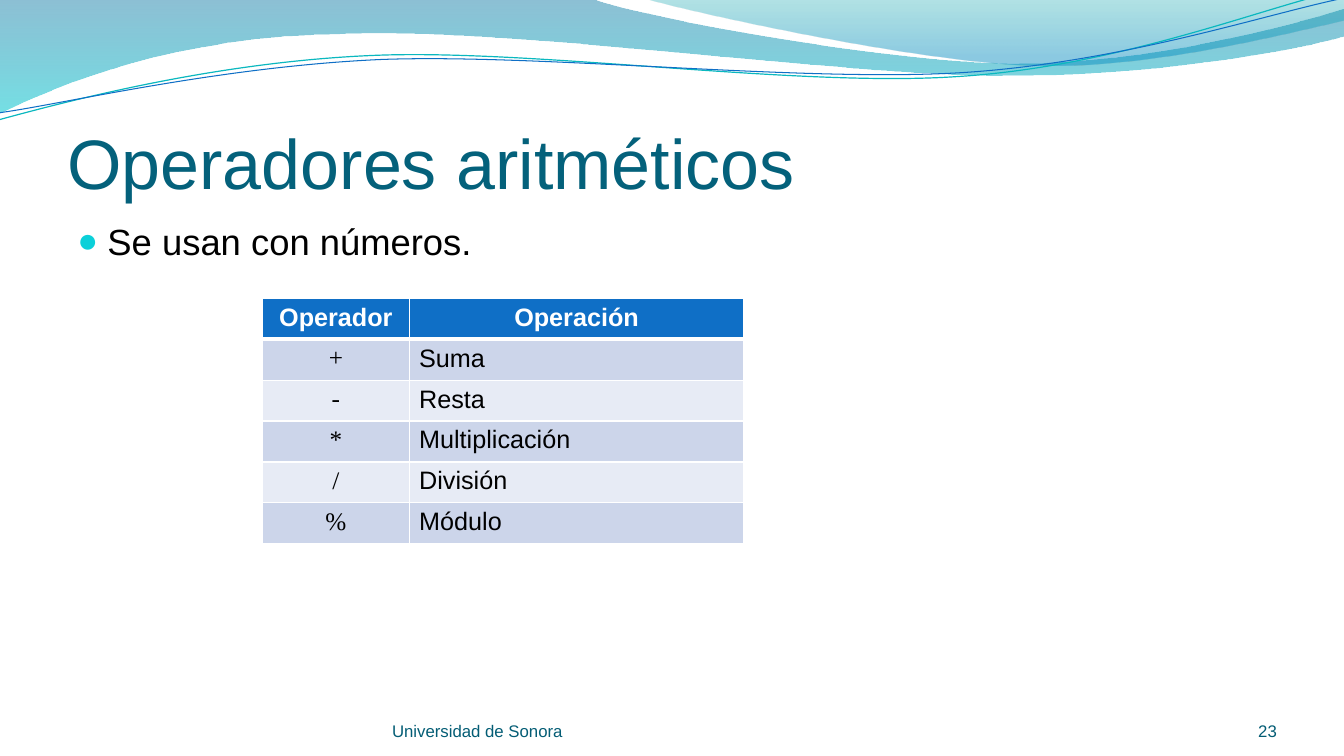
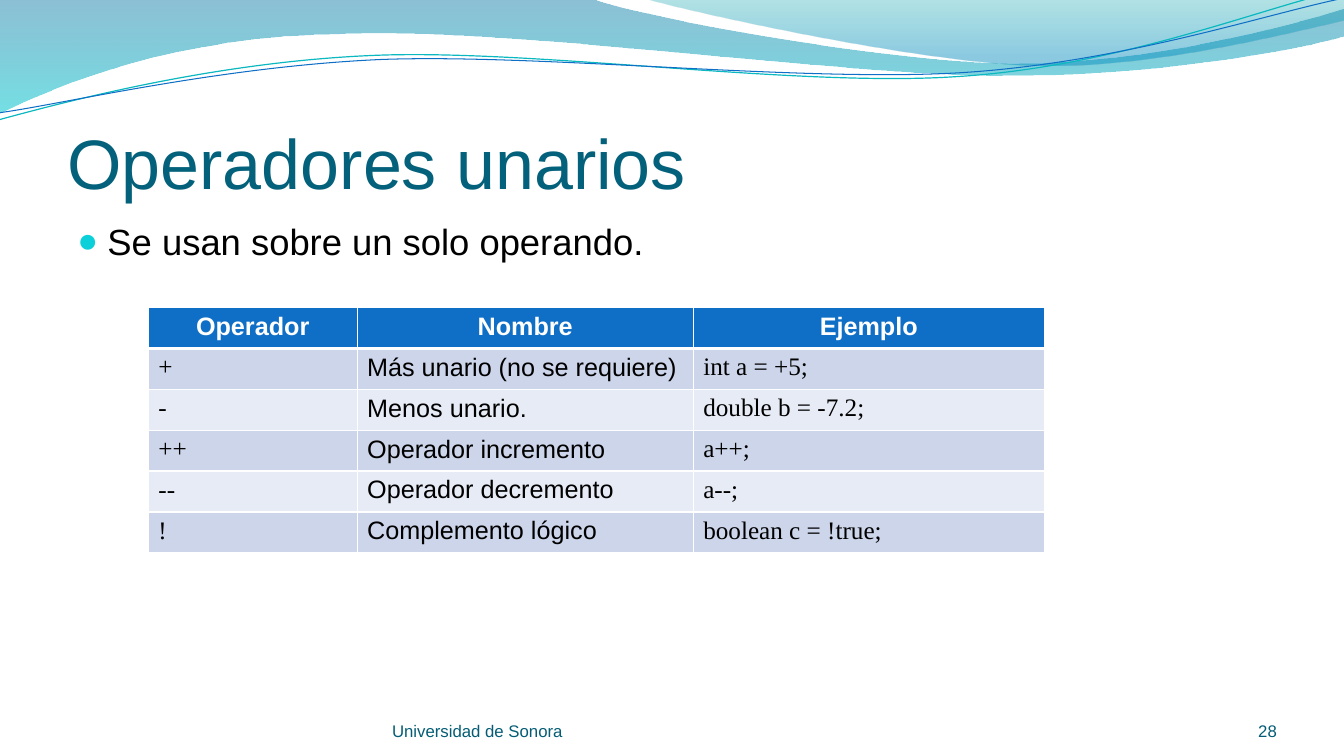
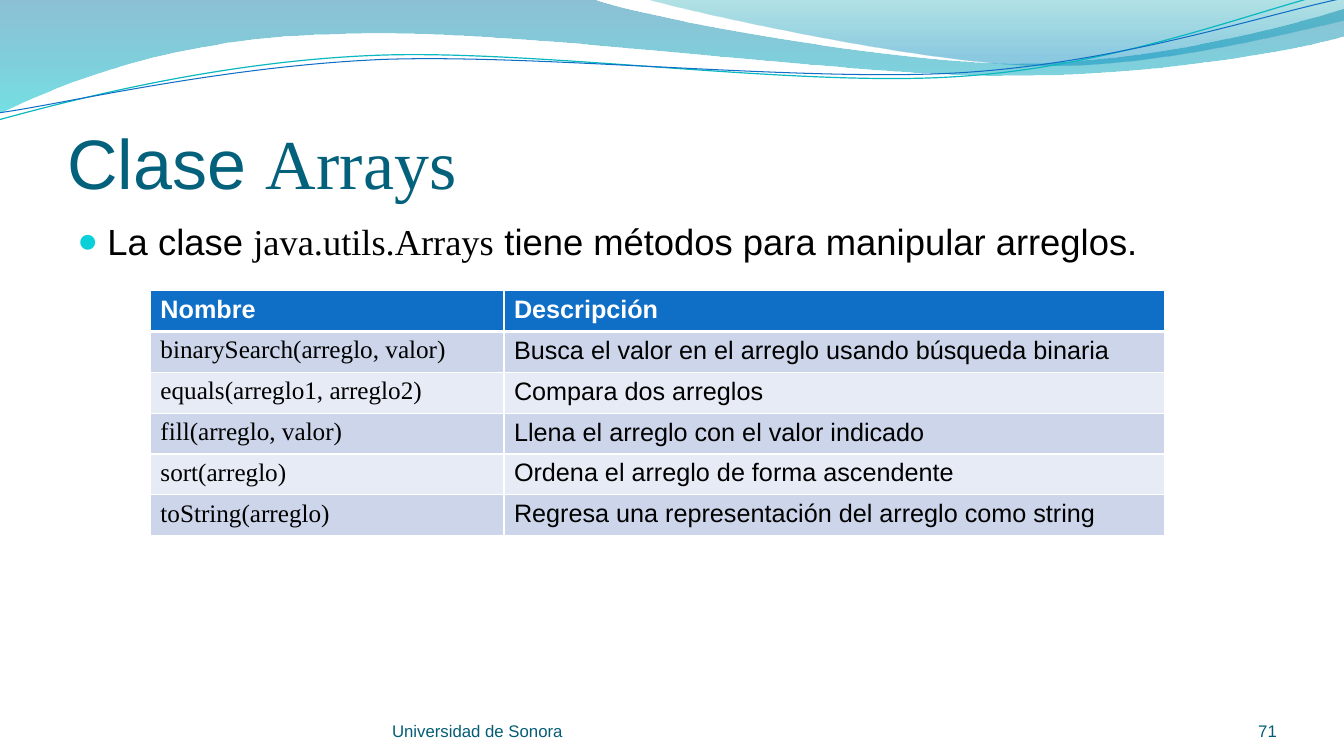
from lxml.etree import SubElement
from pptx import Presentation
from pptx.dml.color import RGBColor
from pptx.enum.text import MSO_ANCHOR, PP_ALIGN
from pptx.oxml.ns import qn
from pptx.util import Cm, Pt

HUES = {
    "title": "04617B", "foot": "045D75", "text": "000000", "white": "FFFFFF",
    "bullet": "0BD0D9", "head": "0F6FC6", "odd": "CCD5EA", "even": "E7EBF5",
    "deep": "0074A1", "aqua": "00C6CF", "sea": "00A1A9", "sky": "008BBF",
    "teal": "0AB8BF", "blue": "0F6FC6",
}
SANS, SERIF = "Arial", "Times New Roman"
LEFT, MID, RIGHT = PP_ALIGN.LEFT, PP_ALIGN.CENTER, PP_ALIGN.RIGHT
FOOT = "Universidad de Sonora"
ROW = 1.03

# Title and lead alternate between the sans and the serif font.
SLIDES = [
    {
        "title": ["Operadores aritméticos"],
        "lead": ["Se usan con números."],
        "page": "23",
        "at": (6.62, 7.52), "cols": (3.69, 8.44),
        "fonts": (SERIF, SANS), "head": MID, "align": (MID, LEFT),
        "rows": [
            ("Operador", "Operación"),
            ("+", "Suma"),
            ("-", "Resta"),
            ("*", "Multiplicación"),
            ("/", "División"),
            ("%", "Módulo"),
        ],
    },
    {
        "title": ["Operadores unarios"],
        "lead": ["Se usan sobre un solo operando."],
        "page": "28",
        "at": (3.74, 7.75), "cols": (5.26, 8.47, 8.85),
        "fonts": (SERIF, SANS, SERIF), "head": MID, "align": (LEFT, LEFT, LEFT),
        "rows": [
            ("Operador", "Nombre", "Ejemplo"),
            ("+", "Más unario (no se requiere)", "int a = +5;"),
            ("-", "Menos unario.", "double b = -7.2;"),
            ("++", "Operador incremento", "a++;"),
            ("--", "Operador decremento", "a--;"),
            ("!", "Complemento lógico", "boolean c = !true;"),
        ],
    },
    {
        "title": ["Clase ", "Arrays"],
        "lead": ["La clase ", "java.utils.Arrays",
                 " tiene métodos para manipular arreglos."],
        "page": "71",
        "at": (3.79, 7.32), "cols": (8.91, 16.65),
        "fonts": (SERIF, SANS), "head": LEFT, "align": (LEFT, LEFT),
        "rows": [
            ("Nombre", "Descripción"),
            ("binarySearch(arreglo, valor)",
             "Busca el valor en el arreglo usando búsqueda binaria"),
            ("equals(arreglo1, arreglo2)", "Compara dos arreglos"),
            ("fill(arreglo, valor)", "Llena el arreglo con el valor indicado"),
            ("sort(arreglo)", "Ordena el arreglo de forma ascendente"),
            ("toString(arreglo)",
             "Regresa una representación del arreglo como string"),
        ],
    },
]

# Each step holds one point (straight) or three points (Bézier curve), in cm.
WAVES = [
    {
        "start": (0, 0),
        "steps": [
            [(14.91, -0.03)],
            [(16.1, 0.43), (22.48, 1.6), (25.68, 1.6)],
            [(28.91, 1.6), (32.46, 0.66), (33.86, 0.23)],
            [(33.91, 0.91)],
            [(33.3, 1.12), (29.46, 1.93), (25.25, 1.91)],
            [(21.06, 1.91), (12.93, 0.71), (8.71, 0.86)],
            [(4.37, 0.91), (1.55, 2.11), (-0.03, 2.87)],
            [(0, 0)],
        ],
        "stops": [(0, "deep", 45), (1, "aqua", 55)],
    },
    {
        "start": (16.23, -0.03),
        "steps": [
            [(17.25, 0.28), (23.09, 1.57), (26.04, 1.65)],
            [(28.98, 1.75), (32.56, 0.81), (33.86, 0.53)],
            [(33.86, 0)],
            [(16.23, -0.03)],
        ],
        "stops": [(0, "sea", 30), (0.8, "sky", 45)],
    },
    {
        "start": (-0.03, 3.02),
        "steps": [
            [(1.63, 2.57), (5.36, 1.57), (9.37, 1.4)],
            [(13.39, 1.22), (20.07, 2.21), (24.13, 1.93)],
            [(28.19, 1.68), (31.8, 0.2), (33.81, -0.25)],
        ],
        "line": ("teal", 0.85),
    },
    {
        "start": (0, 2.84),
        "steps": [
            [(1.6, 2.62), (5.54, 1.68), (9.6, 1.5)],
            [(13.64, 1.35), (20.22, 2.08), (24.26, 1.83)],
            [(28.32, 1.57), (31.88, 0.36), (33.88, -0.05)],
        ],
        "line": ("blue", 0.75),
    },
]


def rgb(name):
    return RGBColor.from_string(HUES[name])


def bend(shape, steps):
    """Join the three lines of each curved step into one Bézier curve."""
    lines = iter(list(shape._element.iter(qn("a:lnTo"))))
    for step in steps:
        parts = [next(lines) for _ in step]
        if len(parts) == 3:
            curve = parts[0].makeelement(qn("a:cubicBezTo"))
            parts[0].addprevious(curve)
            for part in parts:
                curve.append(part[0])
                part.getparent().remove(part)


def add_wave(slide, wave):
    x, y = wave["start"]
    pen = slide.shapes.build_freeform(Cm(x), Cm(y))
    dots = [(Cm(x), Cm(y)) for step in wave["steps"] for x, y in step]
    pen.add_line_segments(dots, close="stops" in wave)
    shape = pen.convert_to_shape()
    bend(shape, wave["steps"])
    shape.shadow.inherit = False
    if "line" in wave:
        hue, width = wave["line"]
        shape.fill.background()
        shape.line.color.rgb = rgb(hue)
        shape.line.width = Pt(width)
        return
    shape.line.fill.background()
    shape.fill.gradient()
    shape.fill.gradient_angle = 270
    for stop, (place, hue, _) in zip(shape.fill.gradient_stops, wave["stops"]):
        stop.position = place
        stop.color.rgb = rgb(hue)
    tints = shape._element.iter(qn("a:srgbClr"))
    for tint, (_, _, alpha) in zip(tints, wave["stops"]):
        SubElement(tint, qn("a:alpha"), val=str(alpha * 1000))


def add_run(para, text, size, hue, font=SANS, bold=False):
    run = para.add_run()
    run.text = text
    look = {"name": font, "size": Pt(size), "bold": bold}
    for key, value in look.items():
        setattr(run.font, key, value)
    run.font.color.rgb = rgb(hue)


def add_text(slide, box, parts, size, hue, pads=(0, 0, 0, 0),
             anchor=MSO_ANCHOR.BOTTOM, align=LEFT):
    frame = slide.shapes.add_textbox(*map(Cm, box)).text_frame
    look = {"word_wrap": True, "vertical_anchor": anchor}
    sides = ("margin_left", "margin_top", "margin_right", "margin_bottom")
    look.update(zip(sides, map(Cm, pads)))
    for key, value in look.items():
        setattr(frame, key, value)
    para = frame.paragraphs[0]
    para.alignment = align
    for i, part in enumerate(parts):
        add_run(para, part, size, hue, (SANS, SERIF)[i % 2])
    return para


def add_bullet(para):
    props = para._p.get_or_add_pPr()
    props.set("marL", str(Cm(0.76)))
    props.set("indent", str(-Cm(0.76)))
    gap = SubElement(props, qn("a:spcBef"))
    SubElement(gap, qn("a:spcPct"), val="20000")
    tint = SubElement(props, qn("a:buClr"))
    SubElement(tint, qn("a:srgbClr"), val=HUES["bullet"])
    SubElement(props, qn("a:buSzPct"), val="95000")
    SubElement(props, qn("a:buFont"), typeface=SANS)
    SubElement(props, qn("a:buChar"), char="●")


def add_edges(cell, row):
    """Draw white cell borders, thick between the head and the body."""
    props = cell._tc.get_or_add_tcPr()
    for side in "LRTB":
        thick = (row, side) in ((0, "B"), (1, "T"))
        edge = SubElement(props, qn("a:ln" + side), w=str(Pt(3 if thick else 1)))
        fill = SubElement(edge, qn("a:solidFill"))
        SubElement(fill, qn("a:srgbClr"), val=HUES["white"])


def add_grid(slide, data):
    rows, cols = data["rows"], data["cols"]
    box = (*data["at"], sum(cols), ROW * len(rows))
    table = slide.shapes.add_table(len(rows), len(cols), *map(Cm, box)).table
    for col, width in zip(table.columns, cols):
        col.width = Cm(width)
    for r, texts in enumerate(rows):
        table.rows[r].height = Cm(ROW)
        for c, text in enumerate(texts):
            cell = table.cell(r, c)
            add_edges(cell, r)
            cell.fill.solid()
            para = cell.text_frame.paragraphs[0]
            if r == 0:
                cell.fill.fore_color.rgb = rgb("head")
                para.alignment = data["head"]
                add_run(para, text, 18, "white", bold=True)
            else:
                cell.fill.fore_color.rgb = rgb("odd" if r % 2 else "even")
                para.alignment = data["align"][c]
                add_run(para, text, 18, "text", data["fonts"][c])


def add_slide(deck, data):
    slide = deck.slides.add_slide(deck.slide_layouts[6])
    for wave in WAVES:
        add_wave(slide, wave)
    add_text(slide, (1.7, 1.96, 30.48, 3.18), data["title"], 50, "title",
             pads=(0, 0.13, 0, 0))
    lead = add_text(slide, (1.7, 5.38, 30.48, 12.19), data["lead"], 26, "text",
                    pads=(0.25, 0.13, 0.25, 0.13), anchor=MSO_ANCHOR.TOP)
    add_bullet(lead)
    add_text(slide, (9.88, 17.65, 12.42, 1.02), [FOOT], 12, "foot")
    add_text(slide, (29.36, 17.65, 2.82, 1.02), [data["page"]], 12, "foot",
             align=RIGHT)
    add_grid(slide, data)


def main():
    deck = Presentation()
    deck.slide_width, deck.slide_height = Cm(33.87), Cm(19.05)
    for data in SLIDES:
        add_slide(deck, data)
    deck.save("out.pptx")


if __name__ == "__main__":
    main()
